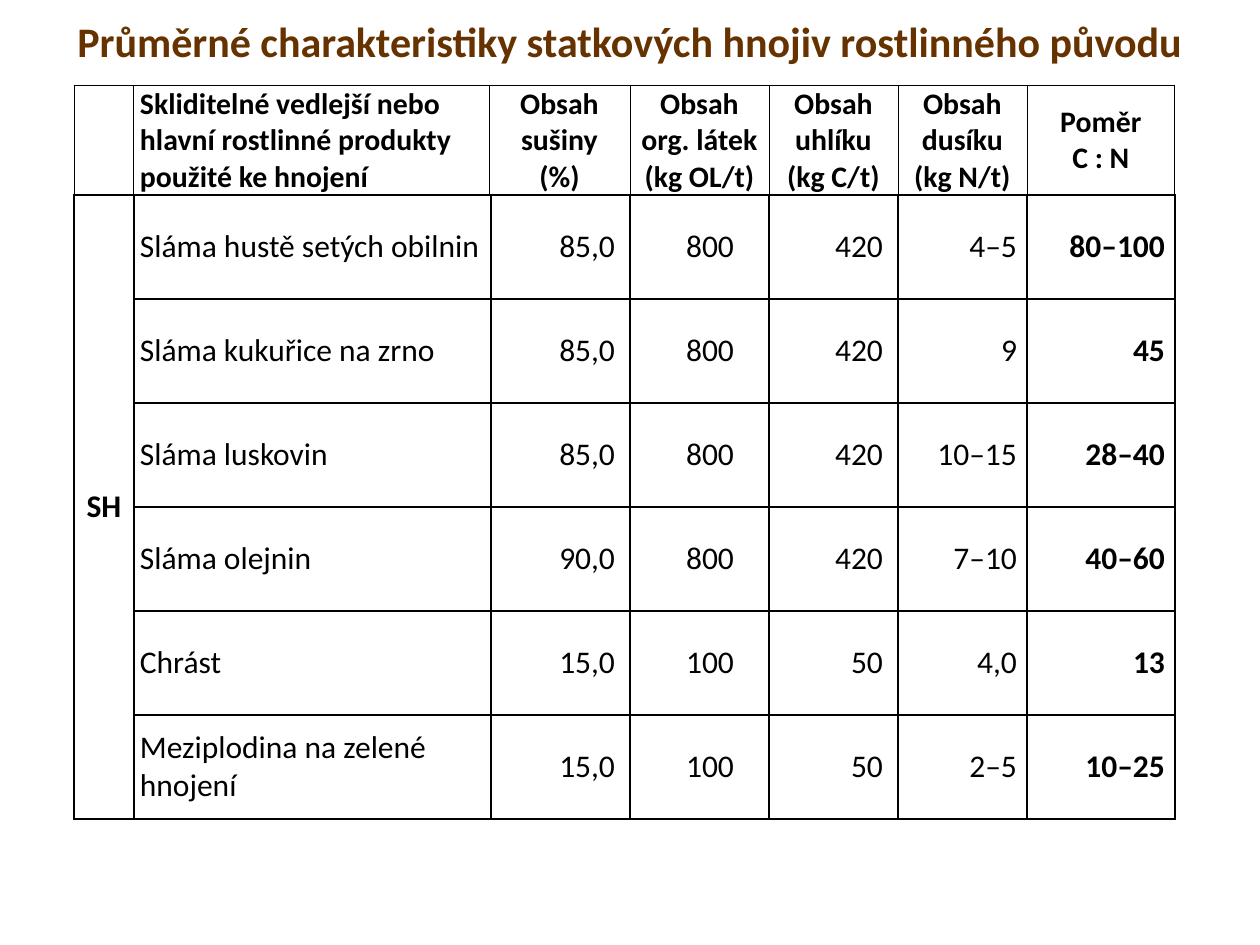
from dataclasses import dataclass

from lxml import etree
from pptx import Presentation
from pptx.dml.color import RGBColor
from pptx.enum.text import MSO_ANCHOR, PP_ALIGN
from pptx.oxml.ns import qn
from pptx.table import Table, _Cell
from pptx.text.text import TextFrame
from pptx.util import Emu, Pt

LEFT, CENTER, RIGHT = PP_ALIGN.LEFT, PP_ALIGN.CENTER, PP_ALIGN.RIGHT
MIDDLE = MSO_ANCHOR.MIDDLE
EMU_PER_PX = 914400 / 126
FONT = "Calibri"
BLACK, BROWN = "000000", "663300"
TABLE_LEFT = 74


@dataclass(frozen=True)
class Style:
    size: int
    align: int = LEFT
    bold: bool = False
    color: str = BLACK
    space: int = 0  # points before and after the paragraph
    margins: tuple[int, int, int, int] = (0, 0, 0, 0)  # left, top, right, bottom


def px(length: int) -> Emu:
    return Emu(round(length * EMU_PER_PX))


def rgb(color: str) -> RGBColor:
    return RGBColor.from_string(color)


def write(frame: TextFrame, wording: str, style: Style) -> None:
    frame.text = wording
    paragraph = frame.paragraphs[0]
    paragraph.alignment = style.align
    paragraph.space_before = paragraph.space_after = Pt(style.space)
    for run in paragraph.runs:
        run.font.name = FONT
        run.font.size = Pt(style.size)
        run.font.bold = style.bold
        run.font.color.rgb = rgb(style.color)


def add_borders(cell: _Cell, width: float) -> None:
    properties = cell._tc.get_or_add_tcPr()
    for side in ("a:lnL", "a:lnR", "a:lnT", "a:lnB"):
        line = etree.SubElement(properties, qn(side), w=str(Pt(width)))
        fill = etree.SubElement(line, qn("a:solidFill"))
        etree.SubElement(fill, qn("a:srgbClr"), val=BLACK)


def fill_cell(cell: _Cell, wording: str, style: Style) -> None:
    (cell.margin_left, cell.margin_top,
     cell.margin_right, cell.margin_bottom) = map(px, style.margins)
    cell.vertical_anchor = MIDDLE
    write(cell.text_frame, wording, style)


def add_grid(slide, top: int, widths: list[int], row_height: int,
             row_count: int, border: float) -> Table:
    table = slide.shapes.add_table(
        row_count, len(widths), px(TABLE_LEFT), px(top),
        px(sum(widths)), px(row_height * row_count)).table
    table.first_row = table.horz_banding = False
    for column, width in zip(table.columns, widths):
        column.width = px(width)
    for row in table.rows:
        row.height = px(row_height)
    for cell in table.iter_cells():
        add_borders(cell, border)
        cell.fill.background()
    return table


def value_style(right_margin: int, bold: bool = False) -> Style:
    return Style(18, RIGHT, bold, space=2, margins=(0, 0, right_margin, 0))


TITLE = Style(24, CENTER, True, BROWN)
HEADING = Style(17, CENTER, True, margins=(1, 1, 1, 0))
PRODUCT_HEADING = Style(17, LEFT, True, margins=(7, 1, 1, 0))
GROUP = Style(18, CENTER, True, space=2, margins=(6, 0, 6, 0))
PRODUCT = Style(18, space=2, margins=(6, 0, 6, 0))

HEADINGS = [
    "Skliditelné vedlejší nebo\vhlavní rostlinné produkty\vpoužité ke hnojení",
    "Obsah\vsušiny\v(%)",
    "Obsah\vorg. látek\v(kg OL/t)",
    "Obsah\vuhlíku\v(kg C/t)",
    "Obsah\vdusíku\v(kg N/t)",
    "Poměr\vC : N",
]
BODY_STYLES = [PRODUCT, value_style(15), value_style(35), value_style(15),
               value_style(10), value_style(10, bold=True)]
FERTILIZERS = [
    ("Sláma hustě setých obilnin", "85,0", "800", "420", "4–5", "80–100"),
    ("Sláma kukuřice na zrno", "85,0", "800", "420", "9", "45"),
    ("Sláma luskovin", "85,0", "800", "420", "10–15", "28–40"),
    ("Sláma olejnin", "90,0", "800", "420", "7–10", "40–60"),
    ("Chrást", "15,0", "100", "50", "4,0", "13"),
    ("Meziplodina na zelené hnojení", "15,0", "100", "50", "2–5", "10–25"),
]


def main() -> None:
    presentation = Presentation()
    presentation.slide_width, presentation.slide_height = px(1260), px(945)
    slide = presentation.slides.add_slide(presentation.slide_layouts[6])

    # Title
    title = slide.shapes.add_textbox(px(0), px(-14), px(1260), px(110)).text_frame
    title.word_wrap = True
    title.vertical_anchor = MIDDLE
    write(title, "Průměrné charakteristiky statkových hnojiv rostlinného původu", TITLE)

    # Fertilizer values, with one group cell spanning all rows
    body = add_grid(slide, 195, [60, 357, 139, 139, 129, 129, 148], 104,
                    len(FERTILIZERS), 1)
    body.cell(0, 0).merge(body.cell(len(FERTILIZERS) - 1, 0))
    fill_cell(body.cell(0, 0), "SH", GROUP)
    for row, fertilizer in enumerate(FERTILIZERS):
        for column, (wording, style) in enumerate(zip(fertilizer, BODY_STYLES), 1):
            fill_cell(body.cell(row, column), wording, style)

    # Column headings
    header = add_grid(slide, 85, [59, 356, 141, 139, 129, 129, 148], 109, 1, 0.5)
    for column, heading in enumerate(HEADINGS, 1):
        style = PRODUCT_HEADING if column == 1 else HEADING
        fill_cell(header.cell(0, column), heading, style)

    presentation.save("out.pptx")


if __name__ == "__main__":
    main()
